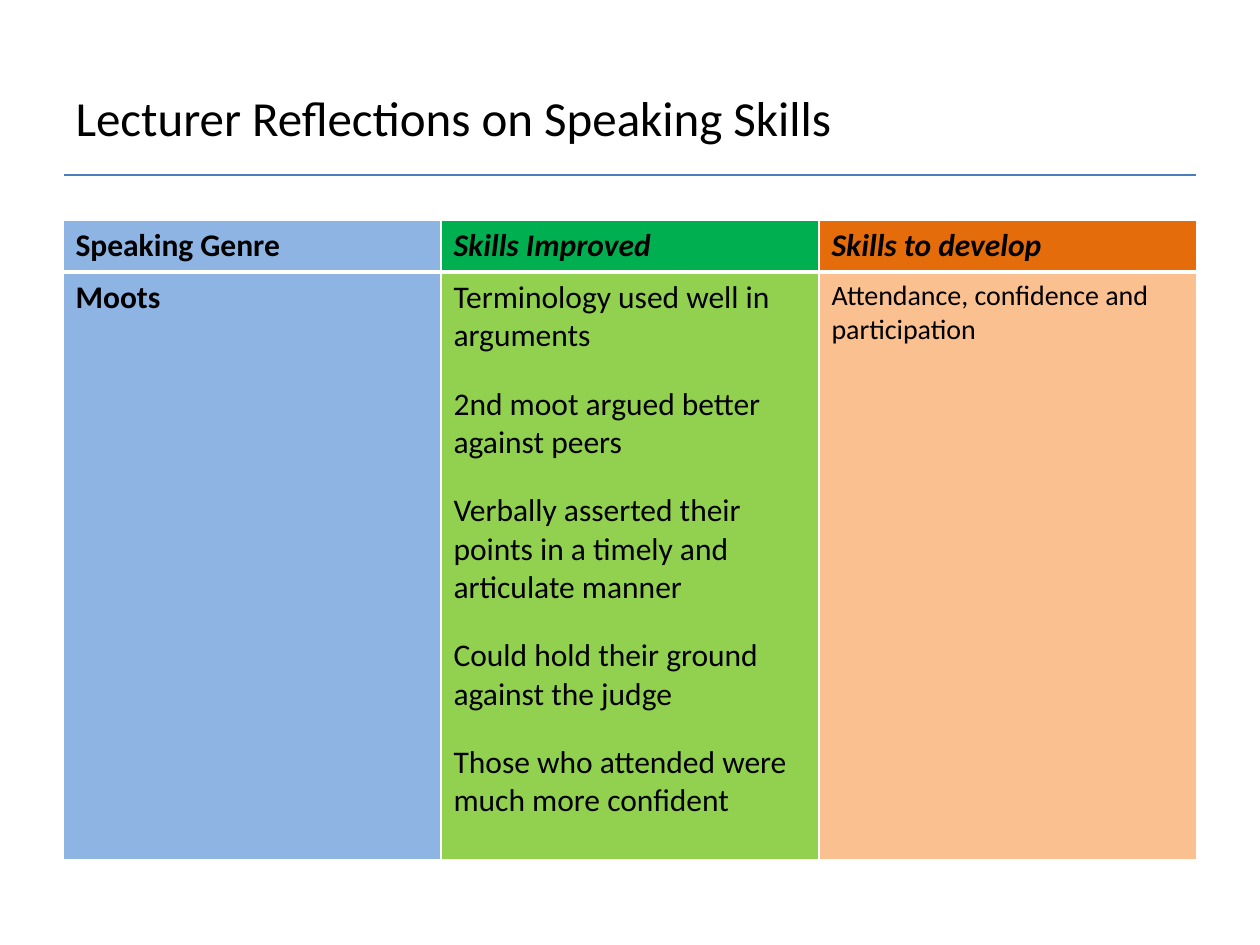
from lxml import etree
from pptx import Presentation
from pptx.dml.color import RGBColor
from pptx.enum.shapes import MSO_CONNECTOR
from pptx.enum.text import MSO_ANCHOR, PP_ALIGN
from pptx.oxml.ns import qn
from pptx.util import Emu, Pt

LINE = MSO_CONNECTOR.STRAIGHT
MID = MSO_ANCHOR.MIDDLE
LEFT = PP_ALIGN.LEFT

SCALE = 9144
FONT = "Calibri"
BLACK = RGBColor(0x00, 0x00, 0x00)
WHITE = RGBColor(0xFF, 0xFF, 0xFF)
RULE = RGBColor(0x4B, 0x7E, 0xBC)
BLUE = RGBColor(0x8E, 0xB4, 0xE3)
GREEN = RGBColor(0x00, 0xB0, 0x50)
LIME = RGBColor(0x92, 0xD0, 0x50)
ORANGE = RGBColor(0xE4, 0x6C, 0x0A)
PEACH = RGBColor(0xFA, 0xC0, 0x90)

TITLE = "Lecturer Reflections on Speaking Skills"
SKILLS = [
    "Terminology used well in arguments",
    "2nd moot argued better against peers",
    "Verbally asserted their points in a timely and articulate manner",
    "Could hold their ground against the judge",
    "Those who attended were much more confident",
]
ROWS = [
    [
        (["Speaking Genre"], BLUE, 18, True, False),
        (["Skills Improved"], GREEN, 18, True, True),
        (["Skills to develop"], ORANGE, 18, True, True),
    ],
    [
        (["Moots"], BLUE, 18, True, False),
        (SKILLS, LIME, 18, False, False),
        (["Attendance, confidence and participation"], PEACH, 16, False, False),
    ],
]
HEIGHTS = [41, 466]
EDGES = [
    {"lnL": 1, "lnR": 1, "lnT": 1, "lnB": 3},
    {"lnL": 1, "lnR": 1, "lnT": 3, "lnB": 1},
]


def px(num):
    return Emu(num * SCALE)


def add_run(para, text, size, bold=False, italic=False):
    run = para.add_run()
    run.text = text
    font = run.font
    font.name = FONT
    font.size = Pt(size)
    font.bold = bold
    font.italic = italic
    font.color.rgb = BLACK


def set_title(slide):
    title = slide.shapes.title
    title.left, title.top = px(50), px(30)
    title.width, title.height = px(900), px(125)
    frame = title.text_frame
    frame.word_wrap = True
    frame.vertical_anchor = MID
    para = frame.paragraphs[0]
    para.alignment = LEFT
    add_run(para, TITLE, 28)


def add_rule(slide):
    rule = slide.shapes.add_connector(LINE, px(51), px(139), px(949), px(139))
    rule.line.color.rgb = RULE
    rule.line.width = Pt(0.75)
    etree.SubElement(rule.element.spPr, qn("a:effectLst"))


def set_edges(cell, edges):
    props = cell._tc.get_or_add_tcPr()
    for spot, (tag, width) in enumerate(edges.items()):
        edge = etree.Element(qn("a:" + tag), w=str(Pt(width)))
        fill = etree.SubElement(edge, qn("a:solidFill"))
        etree.SubElement(fill, qn("a:srgbClr"), val=str(WHITE))
        props.insert(spot, edge)


def fill_cell(cell, texts, color, size, bold, italic):
    cell.fill.solid()
    cell.fill.fore_color.rgb = color
    frame = cell.text_frame
    for num, text in enumerate(texts):
        para = frame.add_paragraph() if num else frame.paragraphs[0]
        if num:
            para.space_before = Pt(17)
        add_run(para, text, size, bold, italic)


def add_grid(slide):
    frame = slide.shapes.add_table(
        len(ROWS), len(ROWS[0]), px(50), px(175), px(900), px(sum(HEIGHTS))
    )
    table = frame.table
    for row, cells in enumerate(ROWS):
        table.rows[row].height = px(HEIGHTS[row])
        for col, data in enumerate(cells):
            cell = table.cell(row, col)
            fill_cell(cell, *data)
            set_edges(cell, EDGES[row])


def main():
    deck = Presentation()
    deck.slide_width, deck.slide_height = px(1000), px(750)
    slide = deck.slides.add_slide(deck.slide_layouts[5])
    add_rule(slide)
    set_title(slide)
    add_grid(slide)
    deck.save("out.pptx")


if __name__ == "__main__":
    main()
